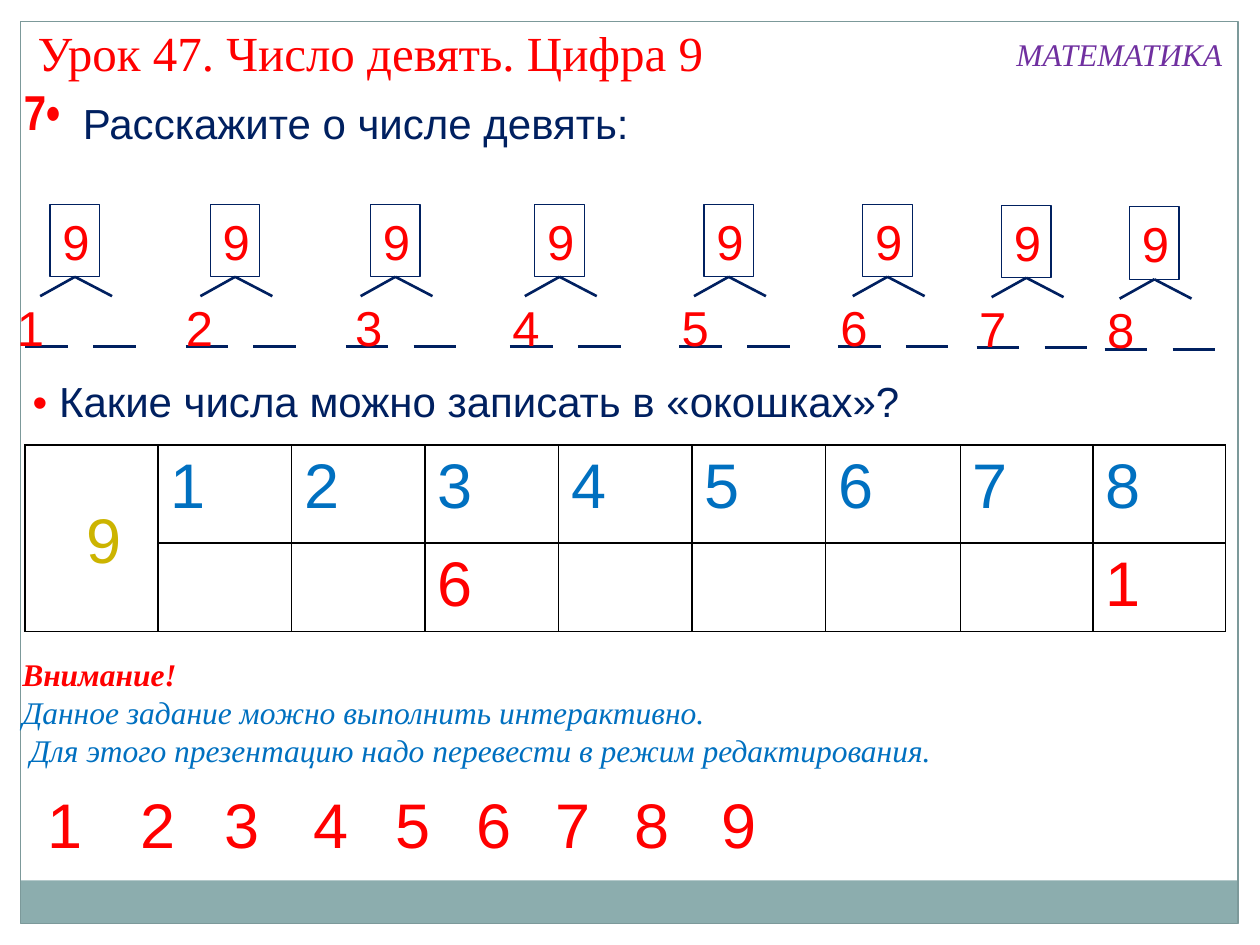
from dataclasses import dataclass

from lxml.etree import SubElement
from pptx import Presentation
from pptx.dml.color import RGBColor
from pptx.enum.shapes import MSO_CONNECTOR, MSO_SHAPE
from pptx.enum.text import MSO_ANCHOR, MSO_AUTO_SIZE, PP_ALIGN
from pptx.oxml.ns import qn
from pptx.util import Cm, Pt


@dataclass(frozen=True)
class Theme:
    """Colours, fonts and type sizes of the lesson."""
    red: str = "FF0000"
    navy: str = "002060"
    blue: str = "0070C0"
    purple: str = "7030A0"
    gold: str = "CCB400"
    band: str = "8CADAE"
    frame: str = "7C999A"
    grid: str = "000000"
    sans: str = "Arial"
    narrow: str = "Arial Narrow"
    serif: str = "Times New Roman"
    note: int = 18
    body: int = 24
    title: int = 28
    digit: int = 36


THEME = Theme()


def style(color, size, name=THEME.sans, **extra):
    """Return the format values of a span."""
    return {"color": color, "size": Pt(size), "name": name, **extra}


def write(frame, paragraphs, wrap=True):
    """Fill a text frame with paragraphs, each a list of (text, style) spans."""
    frame.word_wrap = wrap
    for index, spans in enumerate(paragraphs):
        para = frame.paragraphs[0] if index == 0 else frame.add_paragraph()
        para.alignment = PP_ALIGN.LEFT
        for text, values in spans:
            span = para.add_run()
            span.text = text
            for key, value in values.items():
                if key == "color":
                    span.font.color.rgb = RGBColor.from_string(value)
                else:
                    setattr(span.font, key, value)


def add_text(shapes, box, paragraphs, wrap=True):
    """Add a text box that grows with its text."""
    frame = shapes.add_textbox(*map(Cm, box)).text_frame
    write(frame, paragraphs, wrap)
    frame.auto_size = MSO_AUTO_SIZE.SHAPE_TO_FIT_TEXT


def add_rectangle(shapes, box, fill=None, line=None):
    """Add a rectangle with an optional fill and a thin outline."""
    shape = shapes.add_shape(MSO_SHAPE.RECTANGLE, *map(Cm, box))
    shape.shadow.inherit = False
    if fill:
        shape.fill.solid()
        shape.fill.fore_color.rgb = RGBColor.from_string(fill)
    else:
        shape.fill.background()
    if line:
        shape.line.color.rgb = RGBColor.from_string(line)
        shape.line.width = Pt(0.75)
    else:
        shape.line.fill.background()
    return shape


def add_line(shapes, start, end):
    """Add a straight navy line without shadow."""
    line = shapes.add_connector(MSO_CONNECTOR.STRAIGHT, *map(Cm, (*start, *end)))
    line.line.color.rgb = RGBColor.from_string(THEME.navy)
    line.line.width = Pt(1.5)
    SubElement(line._element.spPr, qn("a:effectLst"))
    return line


def add_background(page, box):
    """Draw the page frame and the band along its foot."""
    left, top, width, height = box
    add_rectangle(page.shapes, (left, top + height - 0.87, width, 0.87), fill=THEME.band)
    add_rectangle(page.shapes, box, line=THEME.frame)


def add_heading(page, box):
    """Write the lesson title, the subject and the first task."""
    left, top, width, _ = box
    lines = [
        ((0, 0, 15.39, 1.45), "Урок 47. Число девять. Цифра 9",
         style(THEME.red, THEME.title, THEME.serif), True),
        ((width - 4.7, 0.25, 4.7, 1.02), "МАТЕМАТИКА",
         style(THEME.purple, THEME.note, THEME.serif, italic=True), False),
        ((-0.28, 1.19, 2.13, 1.45), "7•",
         style(THEME.red, THEME.title, THEME.narrow, bold=True), True),
        ((0.91, 1.52, 16.28, 1.27), "Расскажите о числе девять:",
         style(THEME.navy, THEME.body), True),
    ]
    for (dx, dy, wide, high), text, values, wrap in lines:
        add_text(page.shapes, (left + dx, top + dy, wide, high), [[(text, values)]], wrap)


def add_number_tree(page, box, part, shift):
    """Draw a boxed nine that splits into a known part and a blank."""
    left, top, width, height = box
    shapes = page.shapes.add_group_shape().shapes
    red = style(THEME.red, THEME.title)
    root = add_rectangle(shapes, box, line=THEME.navy)
    write(root.text_frame, [[("9", red)]])
    apex = (left + width / 2, top + height)
    for dx in (-0.2, 1.25):
        branch = add_line(shapes, apex, (left + dx, top + 1.85))
        branch.begin_connect(root, 2)
    for dx in (-0.5, 0.87):
        add_line(shapes, (left + dx, top + 2.87), (left + dx + 0.86, top + 2.87))
    add_text(shapes, (left + shift, top + 1.75, 1, 1.45), [[(str(part), red)]])


def add_tree_row(page, box):
    """Place the eight number trees along the row."""
    left, top, width, height = box
    steps = [0, 3.23, 6.46, 9.77, 13.18, 16.38, 19.18, 21.76]
    drops = {7: 0.02, 8: 0.05}
    shifts = {1: -0.92, 2: -0.74, 3: -0.56}
    for part, step in enumerate(steps, 1):
        tree = (left + step, top + drops.get(part, 0), 1, height)
        add_number_tree(page, tree, part, shifts.get(part, -0.7))


def add_border(cell):
    """Draw thin lines on all sides of a table cell."""
    properties = cell._tc.get_or_add_tcPr()
    for index, side in enumerate(("a:lnL", "a:lnR", "a:lnT", "a:lnB")):
        line = properties.makeelement(qn(side), {"w": str(Pt(1))})
        fill = SubElement(line, qn("a:solidFill"))
        SubElement(fill, qn("a:srgbClr"), {"val": THEME.grid})
        properties.insert(index, line)


def add_window_table(page, box):
    """Build the table of number pairs with the nine beside it."""
    left, top, _, _ = box
    table = page.shapes.add_table(2, 9, *map(Cm, box)).table
    for key in ("first_row", "horz_banding"):
        setattr(table, key, False)
    for column, width in zip(table.columns, [2.69] * 6 + [2.72, 2.67, 2.67]):
        column.width = Cm(width)
    for row, height in zip(table.rows, (1.98, 1.78)):
        row.height = Cm(height)
    for cell in table.iter_cells():
        cell.fill.background()
        cell.vertical_anchor = MSO_ANCHOR.TOP
        add_border(cell)
    table.cell(0, 0).merge(table.cell(1, 0))
    for number in range(1, 9):
        write(table.cell(0, number).text_frame,
              [[(str(number), style(THEME.blue, THEME.digit))]])
    for number in (3, 8):
        write(table.cell(1, number).text_frame,
              [[(str(9 - number), style(THEME.red, THEME.digit))]])
    add_text(page.shapes, (left + 1, top + 0.99, 1.73, 1.8),
             [[("9", style(THEME.gold, THEME.digit))]])


def add_question(page, box):
    """Write the second task with its red bullet."""
    add_text(page.shapes, box, [[
        ("• ", style(THEME.red, THEME.body)),
        ("Какие числа можно записать в «окошках»?", style(THEME.navy, THEME.body)),
    ]])


def add_notice(page, box):
    """Write the remark on doing the task interactively."""
    plain = style(THEME.blue, THEME.note, THEME.serif, italic=True)
    strong = {**plain, "color": THEME.red, "bold": True}
    add_text(page.shapes, box, [
        [("Внимание!", strong)],
        [("Данное задание можно выполнить интерактивно.", plain)],
        [(" Для этого презентацию надо перевести в режим редактирования.", plain)],
    ])


def add_digit_row(page, box):
    """Lay out the loose digits from one to nine."""
    left, top, _, height = box
    steps = [0, 1.88, 3.56, 5.36, 7.01, 8.64, 10.24, 11.84, 13.59]
    for digit, step in enumerate(steps, 1):
        add_text(page.shapes, (left + step, top, 1.22, height),
                 [[(str(digit), style(THEME.red, THEME.digit))]], wrap=False)


def main():
    """Build the lesson page and save the deck."""
    deck = Presentation()
    deck.slide_width, deck.slide_height = Cm(25.4), Cm(19.05)
    page = deck.slides.add_slide(deck.slide_layouts[6])
    add_background(page, (0.42, 0.43, 24.54, 18.19))
    add_tree_row(page, (1.01, 4.12, 22.76, 1.46))
    add_window_table(page, (0.5, 8.97, 24.18, 3.76))
    add_question(page, (0.41, 7.44, 20.09, 1.27))
    add_digit_row(page, (0.71, 15.72, 14.81, 1.8))
    add_notice(page, (0.2, 13.08, 24.69, 2.57))
    add_heading(page, (0.51, 0.33, 24.43, 2.79))
    deck.save("out.pptx")


if __name__ == "__main__":
    main()
